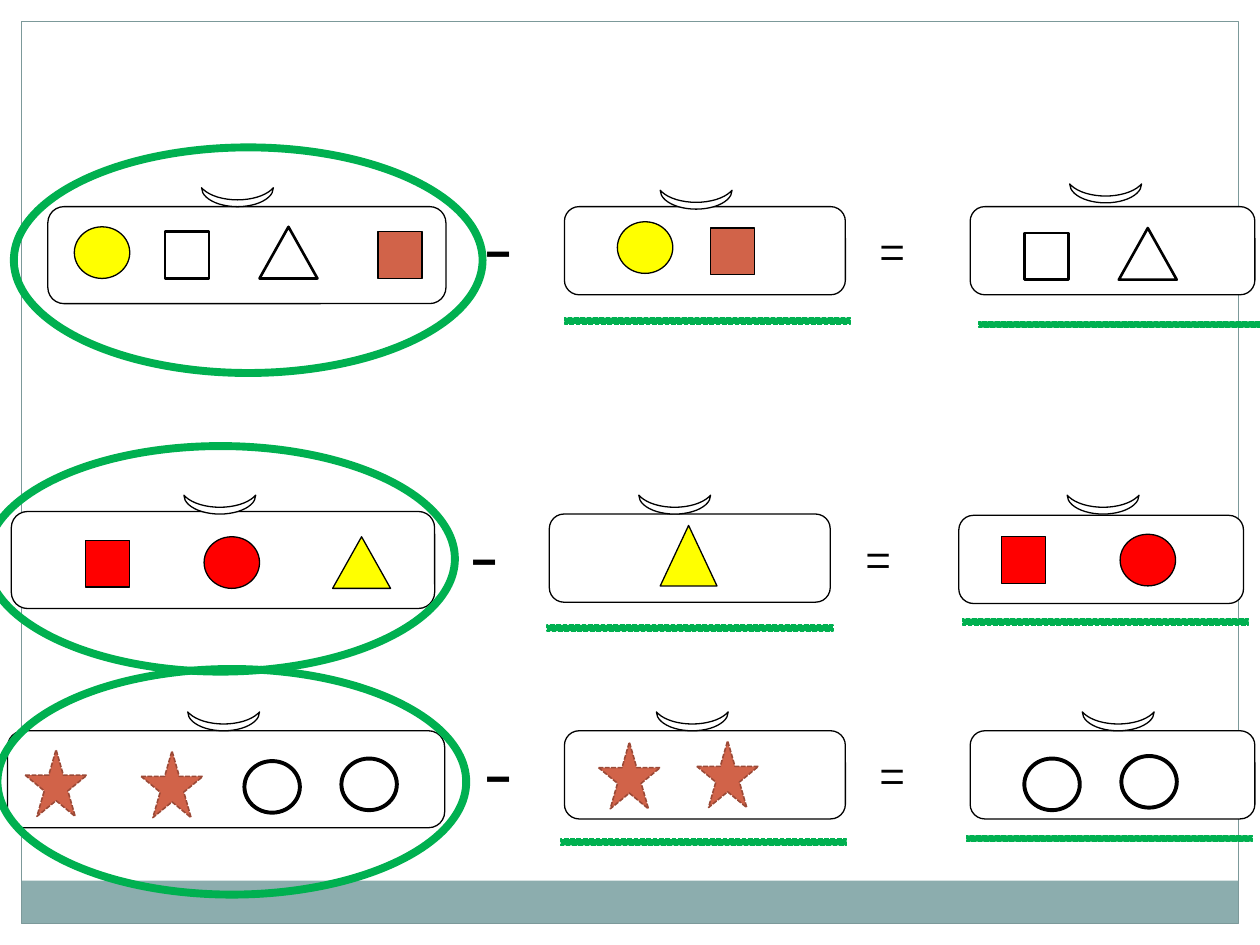
from dataclasses import dataclass

from pptx import Presentation
from pptx.dml.color import RGBColor
from pptx.enum.dml import MSO_LINE
from pptx.enum.shapes import MSO_SHAPE
from pptx.util import Inches, Pt


@dataclass(frozen=True)
class Theme:
    white: str = "FFFFFF"
    black: str = "000000"
    yellow: str = "FFFF00"
    red: str = "FF0000"
    brown: str = "D16349"
    dark_brown: str = "9B4936"
    green: str = "00B050"
    band: str = "8CADAE"
    frame: str = "7C999A"
    font: str = "Montserrat"
    minus_size: int = 48
    equals_size: int = 28
    thin: float = 0.75
    dashed: float = 0.9
    medium: float = 1.5
    thick: float = 2.25
    ring: float = 4.5


T = Theme()

# Token name: preset, width, height, fill, line width
TOKENS = {
    "yellow circle": (MSO_SHAPE.OVAL, 0.44, 0.41, T.yellow, T.thin),
    "red circle": (MSO_SHAPE.OVAL, 0.44, 0.41, T.red, T.thin),
    "white circle": (MSO_SHAPE.OVAL, 0.44, 0.41, T.white, T.thick),
    "white square": (MSO_SHAPE.RECTANGLE, 0.35, 0.37, T.white, T.medium),
    "brown square": (MSO_SHAPE.RECTANGLE, 0.35, 0.37, T.brown, T.thin),
    "red square": (MSO_SHAPE.RECTANGLE, 0.35, 0.37, T.red, T.thin),
    "white triangle": (MSO_SHAPE.ISOSCELES_TRIANGLE, 0.46, 0.41, T.white, T.medium),
    "yellow triangle": (MSO_SHAPE.ISOSCELES_TRIANGLE, 0.46, 0.41, T.yellow, T.thin),
    "tall triangle": (MSO_SHAPE.ISOSCELES_TRIANGLE, 0.45, 0.48, T.yellow, T.thin),
    "star": (MSO_SHAPE.STAR_5_POINT, 0.49, 0.53, T.brown, T.dashed),
}

# Each equation: ring and minus positions, then three bags.
# Bag: box, handle offset, token offsets, underline offset (all from the bag's corner)
EQUATIONS = [
    ((0.11, 1.17), (3.73, 1.49), [
        ((0.38, 1.64, 3.16, 0.77), (1.43, -0.36),
         [("yellow circle", 0.21, 0.16), ("white square", 0.93, 0.2),
          ("white triangle", 1.68, 0.16), ("brown square", 2.62, 0.2)], None),
        ((4.48, 1.64, 2.23, 0.7), (0.97, -0.34),
         [("yellow circle", 0.42, 0.12), ("brown square", 1.16, 0.17)], (0, 0.88)),
        ((7.7, 1.64, 2.26, 0.7), (1, -0.39),
         [("white square", 0.43, 0.21), ("white triangle", 1.18, 0.17)], (0.07, 0.91)),
    ]),
    ((-0.11, 3.54), (3.62, 3.93), [
        ((0.09, 4.06, 3.36, 0.77), (1.58, -0.34),
         [("red square", 0.59, 0.23), ("red circle", 1.53, 0.2),
          ("yellow triangle", 2.55, 0.2)], None),
        ((4.36, 4.08, 2.23, 0.7), (0.92, -0.36),
         [("tall triangle", 0.88, 0.09)], (-0.02, 0.88)),
        ((7.61, 4.09, 2.26, 0.7), (1.07, -0.37),
         [("red square", 0.34, 0.17), ("red circle", 1.28, 0.15)], (0.03, 0.82)),
    ]),
    ((-0.02, 5.31), (3.73, 5.65), [
        ((0.06, 5.8, 3.47, 0.77), (1.64, -0.36),
         [("star", 0.14, 0.15), ("star", 1.06, 0.16),
          ("white circle", 1.88, 0.24), ("white circle", 2.65, 0.22)], None),
        ((4.48, 5.8, 2.23, 0.7), (0.94, -0.36),
         [("star", 0.27, 0.09), ("star", 1.05, 0.08)], (-0.03, 0.86)),
        ((7.7, 5.8, 2.26, 0.7), (1.1, -0.36),
         [("white circle", 0.43, 0.22), ("white circle", 1.2, 0.2)], (-0.03, 0.83)),
    ]),
]


def add_shape(s, kind, box, fill=None, line=None, weight=T.thin, dash=False):
    sp = s.shapes.add_shape(kind, *map(Inches, box))
    sp.shadow.inherit = False
    if fill:
        sp.fill.solid()
        sp.fill.fore_color.rgb = RGBColor.from_string(fill)
    else:
        sp.fill.background()
    if line:
        sp.line.color.rgb = RGBColor.from_string(line)
        sp.line.width = Pt(weight)
        if dash:
            sp.line.dash_style = MSO_LINE.SQUARE_DOT
    else:
        sp.line.fill.background()
    return sp


def add_operator(s, text, size, box):
    sp = s.shapes.add_textbox(*map(Inches, box))
    sp.fill.solid()
    sp.fill.fore_color.rgb = RGBColor.from_string(T.white)
    tf = sp.text_frame
    tf.word_wrap = True
    p = tf.paragraphs[0]
    p.text = text
    p.font.name = T.font
    p.font.size = Pt(size)
    p.font.color.rgb = RGBColor.from_string(T.black)


def add_frame(s, x, y, w, h):
    band = 0.34
    add_shape(s, MSO_SHAPE.RECTANGLE, (x, y + h - band, w, band), T.band)
    add_shape(s, MSO_SHAPE.RECTANGLE, (x, y, w, h), line=T.frame)


def add_bag(s, box, handle, tokens, underline):
    x, y = box[:2]
    add_shape(s, MSO_SHAPE.ROUNDED_RECTANGLE, box, T.white, T.black)

    # Handle: a crescent lying on its back
    moon = add_shape(s, MSO_SHAPE.MOON, (x + handle[0], y + handle[1], 0.15, 0.57),
                     T.white, T.black)
    moon.rotation = 270
    moon.adjustments[0] = 0.36

    # Contents
    for name, dx, dy in tokens:
        kind, w, h, fill, weight = TOKENS[name]
        star = name == "star"
        add_shape(s, kind, (x + dx, y + dy, w, h), fill,
                  T.dark_brown if star else T.black, weight, dash=star)

    if underline:
        add_shape(s, MSO_SHAPE.RECTANGLE, (x + underline[0], y + underline[1], 2.27, 0.05),
                  T.green, T.green, T.dashed, dash=True)


def add_equation(s, ring, minus, bags):
    x, y = minus
    add_operator(s, "-", T.minus_size, (x, y, 0.42, 1.03))
    add_operator(s, "=", T.equals_size, (x + 3.14, y + 0.22, 0.51, 0.52))
    for bag in bags:
        add_bag(s, *bag)
    # Ring around the whole
    add_shape(s, MSO_SHAPE.OVAL, (*ring, 3.72, 1.79), line=T.green, weight=T.ring)


def main():
    prs = Presentation()
    prs.slide_width, prs.slide_height = Inches(10), Inches(7.5)
    s = prs.slides.add_slide(prs.slide_layouts[6])
    add_frame(s, 0.17, 0.17, 9.66, 7.16)
    for equation in EQUATIONS:
        add_equation(s, *equation)
    prs.save("out.pptx")


if __name__ == "__main__":
    main()
